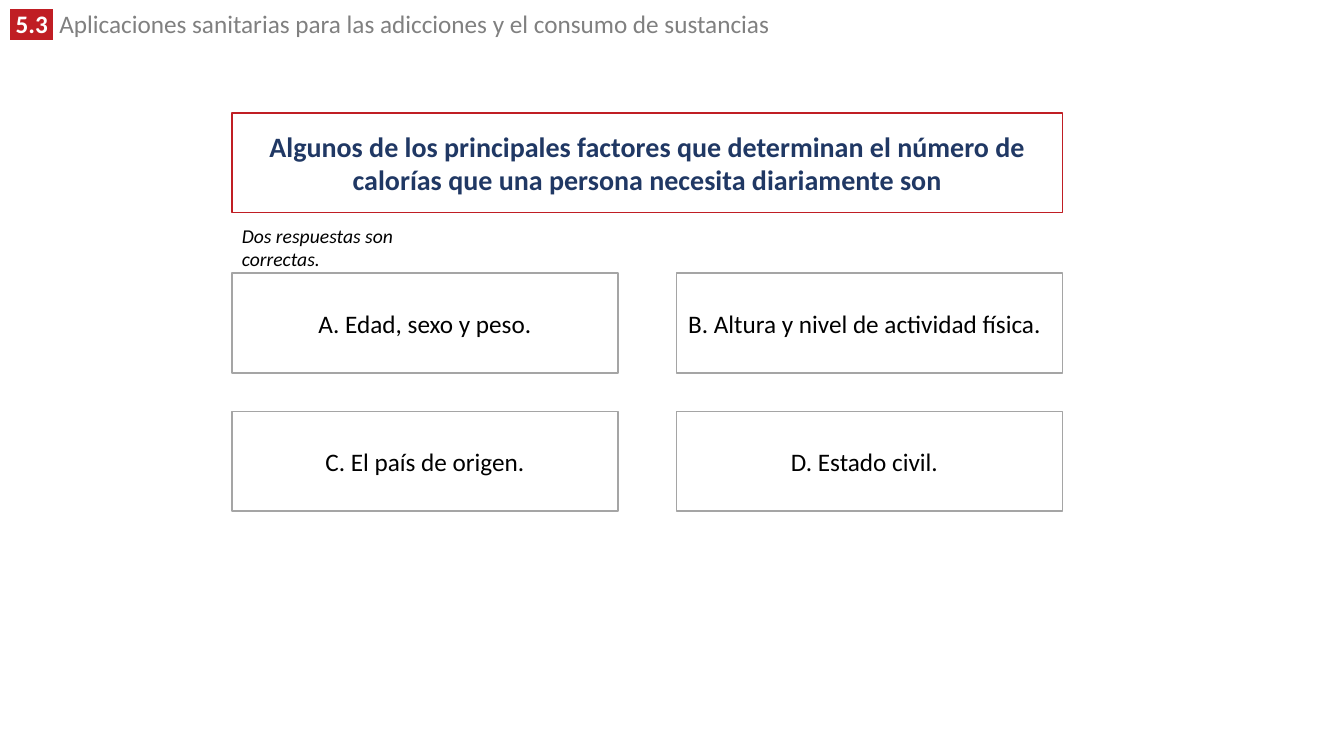
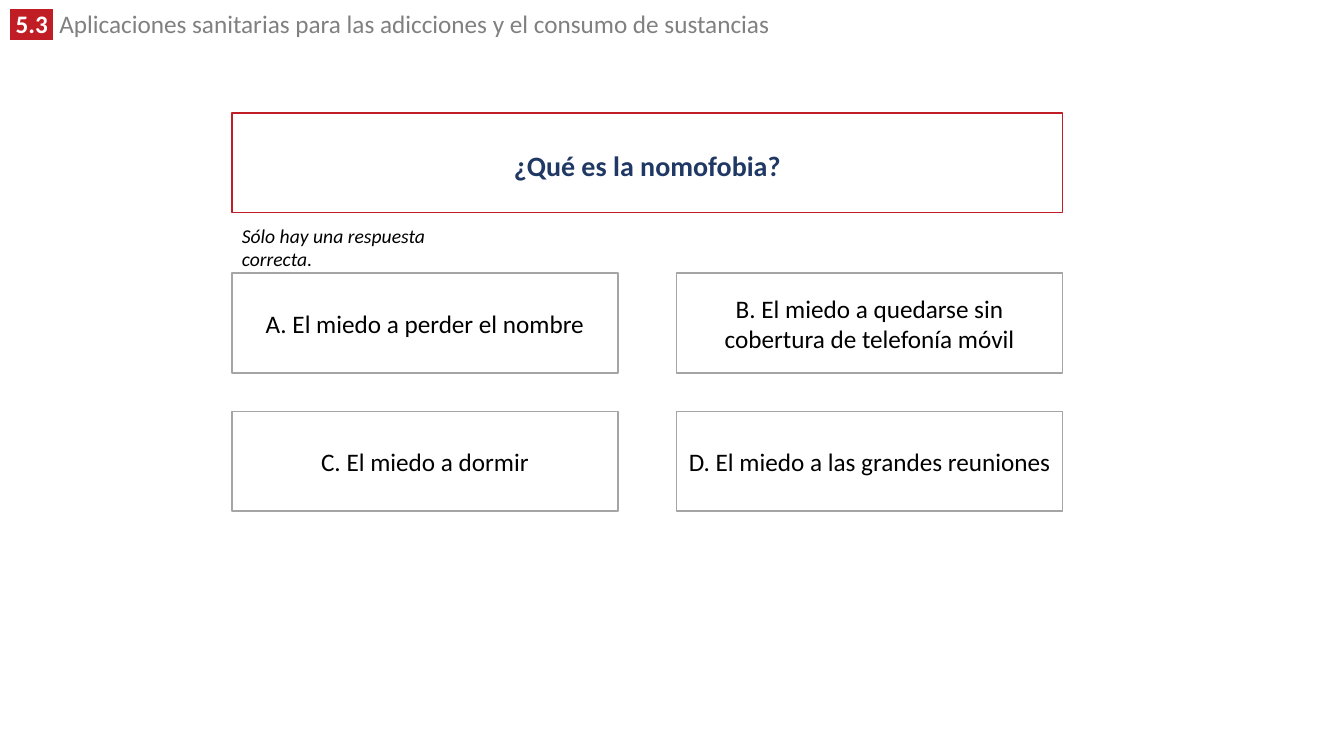
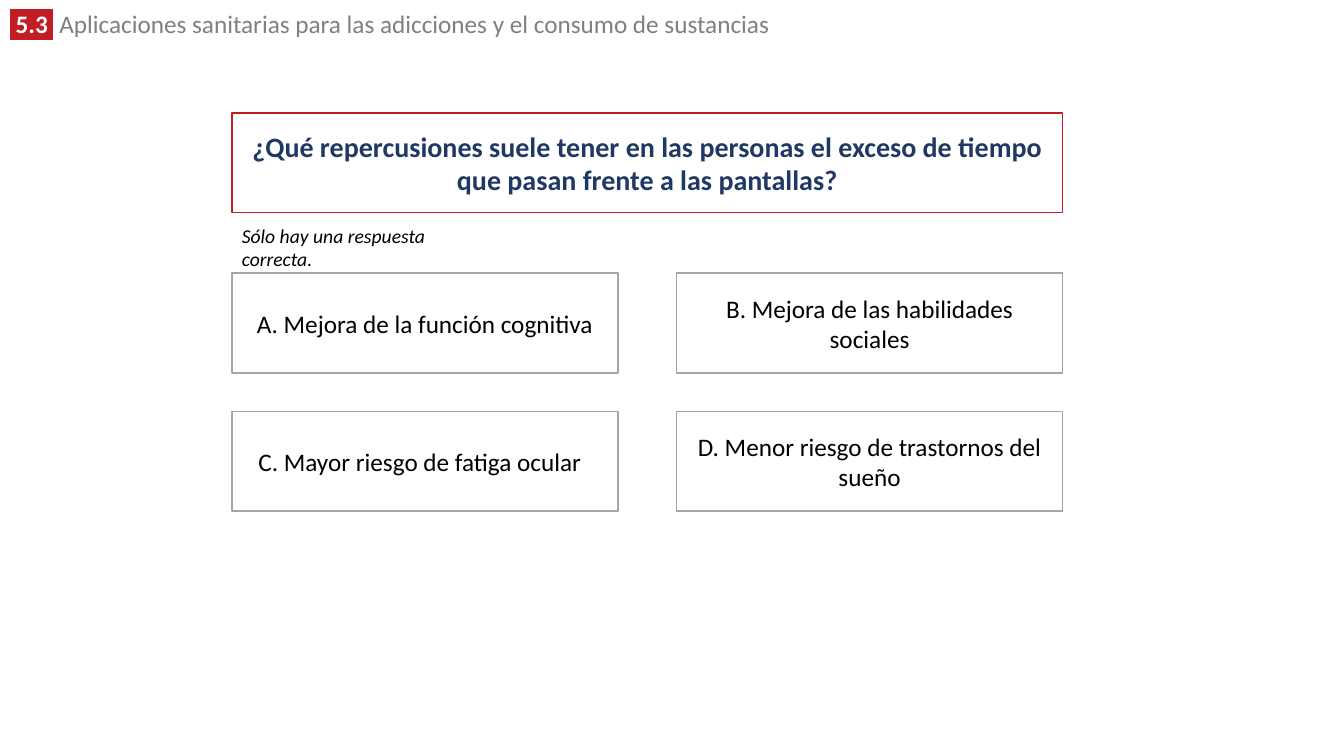
from lxml import etree
from pptx import Presentation
from pptx.dml.color import RGBColor
from pptx.enum import shapes, text
from pptx.oxml import ns
from pptx.util import Inches, Pt

FONT = "Calibri"
COLORS = {"red": "C01E24", "navy": "203864", "gray": "808080",
          "edge": "A5A5A5", "ink": "000000", "white": "FFFFFF"}
UNIT = " 5.3 "
TOPIC = " Aplicaciones sanitarias para las adicciones y el consumo de sustancias"
ONE = "Sólo hay una respuesta correcta."

# "left" names the answers set slightly left of centre
QUIZ = [
    {"ask": "Algunos de los principales factores que determinan el número de "
            "calorías que una persona necesita diariamente son",
     "hint": "Dos respuestas son correctas.", "space": 1, "left": "BD",
     "answers": ["A. Edad, sexo y peso.", "B. Altura y nivel de actividad física.",
                 "C. El país de origen.", "D. Estado civil."]},
    {"ask": "¿Qué es la nomofobia?",
     "hint": ONE, "space": 1.15, "left": "",
     "answers": ["A. El miedo a perder el nombre",
                 "B. El miedo a quedarse sin cobertura de telefonía móvil",
                 "C. El miedo a dormir", "D. El miedo a las grandes reuniones"]},
    {"ask": "¿Qué repercusiones suele tener en las personas el exceso de tiempo "
            "que pasan frente a las pantallas?",
     "hint": ONE, "space": 1, "left": "C",
     "answers": ["A. Mejora de la función cognitiva",
                 "B. Mejora de las habilidades sociales",
                 "C. Mayor riesgo de fatiga ocular",
                 "D. Menor riesgo de trastornos del sueño"]},
]

LEFT, WIDE, HIGH = 2.3, 8.24, 0.99
ASK_TOP, HINT_TOP, GRID_TOP = 1.12, 2.17, 2.71
CELL, ROW = 3.83, 1.37
COL = WIDE - CELL


def rgb(name):
    return RGBColor.from_string(COLORS[name])


def style(font, size, color, bold=False, italic=False):
    font.size, font.bold, font.italic = Pt(size), bold, italic
    font.color.rgb = rgb(color)
    font.name = FONT


def frame(shape, edge):
    """Give a box its white fill, thin edge and centred text."""
    shape.fill.solid()
    shape.fill.fore_color.rgb = rgb("white")
    shape.line.color.rgb = rgb(edge)
    shape.line.width = Pt(1)
    body = shape.text_frame
    body.word_wrap = True
    body.auto_size = text.MSO_AUTO_SIZE.NONE
    body.vertical_anchor = text.MSO_ANCHOR.MIDDLE
    body.paragraphs[0].alignment = text.PP_ALIGN.CENTER


def add_text(slide, left, top, width, height):
    box = slide.shapes.add_textbox(*map(Inches, (left, top, width, height)))
    box.text_frame.word_wrap = True
    return box


def add_header(slide, layout):
    """Build the header once and move it to the layout all slides share."""
    box = add_text(slide, 0, 0.09, 9.52, 0.35)
    para = box.text_frame.paragraphs[0]
    para.line_spacing = 0.8
    unit, topic = para.add_run(), para.add_run()
    unit.text, topic.text = UNIT, TOPIC
    style(unit.font, 18, "white", bold=True)
    style(topic.font, 18, "gray")
    mark = etree.Element(ns.qn("a:highlight"))
    etree.SubElement(mark, ns.qn("a:srgbClr"), val=COLORS["red"])
    unit.font.fill  # the highlight follows the text fill
    unit.font._element.find(ns.qn("a:solidFill")).addnext(mark)
    layout.shapes.element.append(box.element)


def add_question(slide, ask, space):
    title = slide.shapes.title
    title.left, title.top = Inches(LEFT), Inches(ASK_TOP)
    title.width, title.height = Inches(WIDE), Inches(HIGH)
    shape = etree.Element(ns.qn("a:prstGeom"), prst="roundRect")
    etree.SubElement(shape, ns.qn("a:avLst"))
    title.element.spPr.find(ns.qn("a:xfrm")).addnext(shape)
    title.text_frame.text = ask
    frame(title, "red")
    para = title.text_frame.paragraphs[0]
    para.line_spacing = space
    style(para.runs[0].font, 20, "navy", bold=True)


def add_answer(slide, spot, words, shift):
    row, col = divmod(spot, 2)
    box = slide.shapes.add_shape(
        shapes.MSO_SHAPE.RECTANGLE, Inches(LEFT + col * COL),
        Inches(GRID_TOP + row * ROW), Inches(CELL), Inches(HIGH))
    box.shadow.inherit = False
    box.text_frame.text = words
    frame(box, "edge")
    if shift:
        box.text_frame.margin_right = Inches(0.2)
    style(box.text_frame.paragraphs[0].runs[0].font, 18, "ink")


def main():
    deck = Presentation()
    deck.slide_width, deck.slide_height = Inches(13.33), Inches(7.5)
    layout = deck.slide_layouts.get_by_name("Title Only")
    for item in QUIZ:
        slide = deck.slides.add_slide(layout)
        if item is QUIZ[0]:
            add_header(slide, layout)
        add_question(slide, item["ask"], item["space"])
        hint = add_text(slide, LEFT, HINT_TOP, 2.36, 0.34)
        hint.text_frame.text = item["hint"]
        style(hint.text_frame.paragraphs[0].runs[0].font, 14, "ink", italic=True)
        for spot, words in enumerate(item["answers"]):
            add_answer(slide, spot, words, words[0] in item["left"])
    deck.save("out.pptx")


if __name__ == "__main__":
    main()
